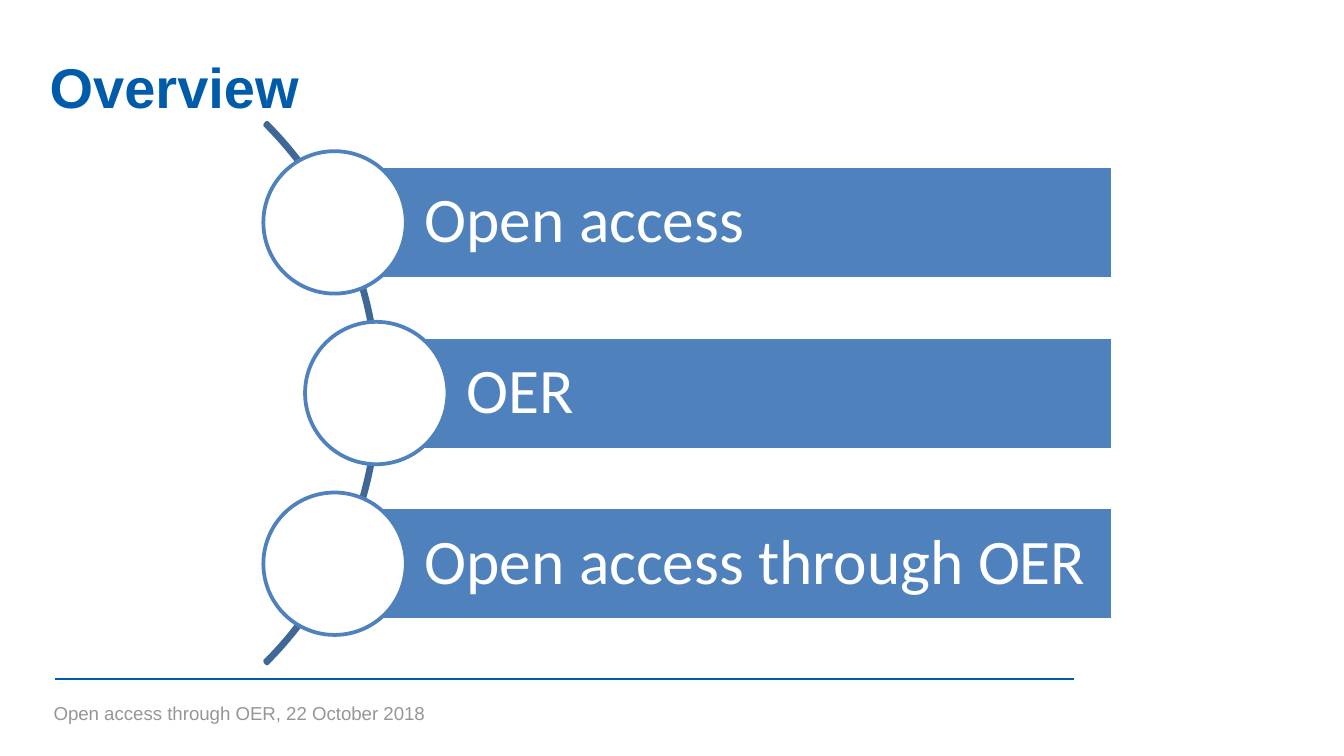
"""Build the overview slide: three topics arranged along an arc."""
import pptx
import pptx.util
import pptx.dml.color
import pptx.enum.shapes
import pptx.enum.text
import pptx.oxml.ns
import lxml.etree

TITLE = "Overview"
FOOTER = "Open access through OER, 22 October 2018"
TOPICS = [("Open access", 2.49), ("OER", 2.8), ("Open access through OER", 2.49)]

BRAND, BLUE, ARC, GREY, WHITE = "005BAA", "4F81BD", "3F6797", "969696", "FFFFFF"
WIDTH = 10
HEIGHT = WIDTH * 9 / 16
MIDDLE, PITCH, BAR_RIGHT, BAR_HEIGHT = 0.52 * HEIGHT, 1.27, 8.28, 0.84
CIRCLE, ARC_LEFT, ARC_SIZE = 1.06, -2.87, 5.69

SHAPE = pptx.enum.shapes.MSO_SHAPE
ANCHOR = pptx.enum.text.MSO_ANCHOR
inch = pptx.util.Inches


def rgb(value):
    return pptx.dml.color.RGBColor.from_string(value)


def add_shape(s, kind, box, line, fill=None):
    sp = s.shapes.add_shape(kind, *map(inch, box))
    sp.shadow.inherit = False
    if fill:
        sp.fill.solid()
        sp.fill.fore_color.rgb = rgb(fill)
    else:
        sp.fill.background()
    sp.line.color.rgb = rgb(line)
    sp.line.width = pptx.util.Pt(2)
    return sp


def write(sp, text, size, font, color, insets, anchor, bold=False):
    tf = sp.text_frame
    tf.word_wrap = True
    tf.auto_size = pptx.enum.text.MSO_AUTO_SIZE.NONE
    tf.vertical_anchor = anchor
    tf.margin_left, tf.margin_top, tf.margin_right, tf.margin_bottom = map(inch, insets)
    p = tf.paragraphs[0]
    p.alignment = pptx.enum.text.PP_ALIGN.LEFT
    r = p.add_run()
    r.text = text
    r.font.size = pptx.util.Pt(size)
    r.font.name = font
    r.font.bold = bold
    r.font.color.rgb = rgb(color)
    return p


def add_rule(s):
    rule = s.shapes.add_connector(
        pptx.enum.shapes.MSO_CONNECTOR.STRAIGHT, *map(inch, (0.41, 5.05, 7.99, 5.05)))
    rule.line.color.rgb = rgb(BRAND)
    rule.line.width = pptx.util.Pt(1)
    lxml.etree.SubElement(rule.element.spPr, pptx.oxml.ns.qn("a:effectLst"))


def add_topics(s):
    arc = add_shape(s, SHAPE.BLOCK_ARC,
                    (ARC_LEFT, MIDDLE - ARC_SIZE / 2, ARC_SIZE, ARC_SIZE), ARC)
    for i, value in enumerate((189, 27, 0.004)):
        arc.adjustments[i] = value
    for row, (text, left) in enumerate(TOPICS):
        center = MIDDLE + (row - 1) * PITCH
        bar = add_shape(s, SHAPE.RECTANGLE,
                        (left, center - BAR_HEIGHT / 2, BAR_RIGHT - left, BAR_HEIGHT),
                        WHITE, BLUE)
        p = write(bar, text, 34, "Calibri", WHITE, (0.67, 0.09, 0.09, 0.09), ANCHOR.MIDDLE)
        p.line_spacing = 0.9
        add_shape(s, SHAPE.OVAL,
                  (left - CIRCLE / 2, center - CIRCLE / 2, CIRCLE, CIRCLE), BLUE, WHITE)


def main():
    prs = pptx.Presentation()
    prs.slide_width, prs.slide_height = inch(WIDTH), inch(HEIGHT)
    s = prs.slides.add_slide(prs.slide_layouts[5])
    add_rule(s)
    title = s.shapes.title
    title.left, title.top, title.width, title.height = map(inch, (0.32, 0.39, 9.27, 0.5))
    write(title, TITLE, 30, "Arial", BRAND, (0.05, 0, 0, 0), ANCHOR.MIDDLE, True)
    footer = s.shapes.add_textbox(*map(inch, (0.3, 5.17, 7.69, 0.27)))
    write(footer, FOOTER, 10, "Arial", GREY, (0.1, 0.05, 0.1, 0.05), ANCHOR.TOP)
    add_topics(s)
    prs.save("out.pptx")


if __name__ == "__main__":
    main()
